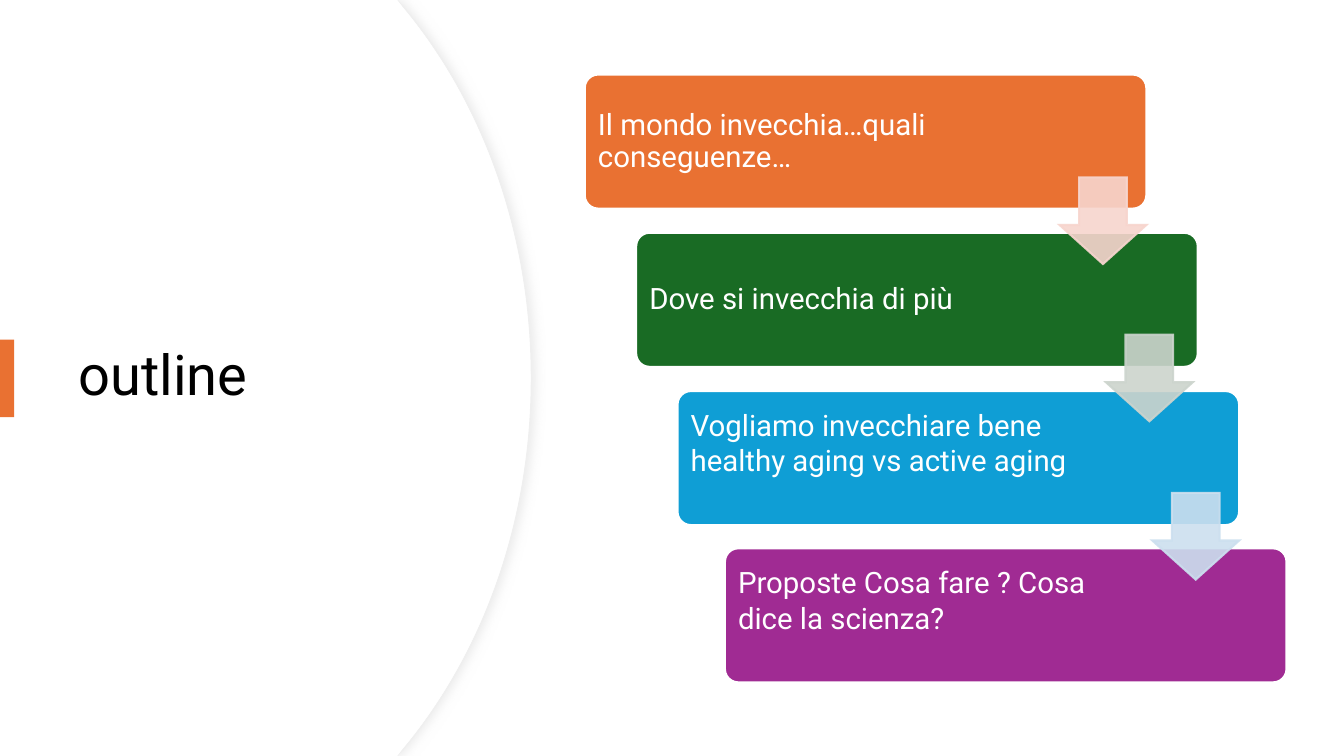
import dataclasses
import typing

import pptx
import pptx.dml.color
import pptx.enum.shapes
import pptx.enum.text
import pptx.oxml
import pptx.oxml.ns
import pptx.util

SCALE = 9144  # EMU in one px, 100 px to the inch
KIND = pptx.enum.shapes.MSO_SHAPE
MIDDLE = pptx.enum.text.MSO_ANCHOR.MIDDLE
LEFT = pptx.enum.text.PP_ALIGN.LEFT
SPACE = pptx.oxml.ns.nsdecls("a")


@dataclasses.dataclass(frozen=True)
class Theme:
    font: str = "Roboto"
    head: int = 40
    body: int = 21
    ink: str = "000000"
    paper: str = "FFFFFF"
    edge: str = "EFEFEF"
    shade: str = "D9D9D9"
    accent: str = "E97132"


@dataclasses.dataclass(frozen=True)
class Step:
    text: str
    left: int
    top: int
    width: int
    fill: str
    foot: int = 9
    lead: float = 1.0


@dataclasses.dataclass(frozen=True)
class Arrow:
    left: int
    top: int
    fill: str


THEME = Theme()
STEPS = [
    Step("Il mondo invecchia…quali conseguenze…", 580, 74, 402, "E97132", lead=0.9),
    Step("Dove si invecchia di più", 631, 231, 416, "196B24", lead=0.9),
    Step("Vogliamo invecchiare bene healthy aging vs active aging",
         672, 388, 417, "0F9ED5", foot=41),
    Step("Proposte Cosa fare ? Cosa dice la scienza?",
         719, 544, 416, "A02B93", foot=40),
]
ARROWS = [
    Arrow(1051, 176, "F7D5CE"),
    Arrow(1097, 332, "CCD4CD"),
    Arrow(1143, 489, "CCDFEF"),
]


def px(size: int) -> pptx.util.Emu:
    return pptx.util.Emu(size * SCALE)


def tint(code: str) -> pptx.dml.color.RGBColor:
    return pptx.dml.color.RGBColor.from_string(code)


def tag(name: str) -> str:
    return pptx.oxml.ns.qn(f"a:{name}")


def apply(item: typing.Any, form: dict[str, typing.Any]) -> None:
    for name, value in form.items():
        setattr(item, name, value)


def paint(shape: typing.Any, fill: str, line: str = "", width: float = 1.5) -> None:
    shape.shadow.inherit = False
    shape.fill.solid()
    shape.fill.fore_color.rgb = tint(fill)
    if line:
        shape.line.color.rgb = tint(line)
        shape.line.width = pptx.util.Pt(width)
        shape.element.spPr.find(tag("ln")).append(
            pptx.oxml.parse_xml(f'<a:miter {SPACE} lim="800000"/>'))
    else:
        shape.line.fill.background()


def fade(shape: typing.Any, share: int) -> None:
    """Set the opacity, in percent, of the fill and line."""
    for color in shape.element.spPr.iter(tag("srgbClr")):
        color.append(pptx.oxml.parse_xml(
            f'<a:alpha {SPACE} val="{share * 1000}"/>'))


def cast(shape: typing.Any) -> None:
    """Give the shape a soft shadow to its right."""
    shape.element.spPr.find(tag("effectLst")).append(pptx.oxml.parse_xml(
        f'<a:outerShdw {SPACE} blurRad="{pptx.util.Pt(7)}" '
        f'dist="{pptx.util.Pt(3)}" dir="0" algn="l" rotWithShape="0">'
        f'<a:srgbClr val="{THEME.shade}"><a:alpha val="50000"/></a:srgbClr>'
        '</a:outerShdw>'))


def bend(shape: typing.Any, first: int, count: int) -> None:
    """Turn each three straight segments, from the first on, into a curve."""
    lines = list(shape.element.spPr.iter(tag("lnTo")))
    for start in range(first, first + 3 * count, 3):
        curve = pptx.oxml.parse_xml(f"<a:cubicBezTo {SPACE}/>")
        lines[start].addprevious(curve)
        for line in lines[start:start + 3]:
            curve.append(line[0])
            line.getparent().remove(line)


def draw_panel(shapes: typing.Any, right: int) -> typing.Any:
    upper = [(394, 0), (right - 126, 8), (right - 48, 102), (right, 232)]
    lower = [(x, 750 - y) for x, y in reversed(upper)]
    pen = shapes.build_freeform(0, 0, scale=SCALE)
    pen.add_line_segments([*upper, (right, 375), *lower, (0, 750)], close=True)
    panel = pen.convert_to_shape()
    bend(panel, first=2, count=2)
    return panel


def write(frame: typing.Any, text: str, size: int, color: str, lead: float) -> None:
    apply(frame, {"word_wrap": True, "vertical_anchor": MIDDLE})
    line = frame.paragraphs[0]
    line.text = text
    apply(line, {"alignment": LEFT, "line_spacing": lead})
    apply(line.font, {"name": THEME.font, "size": pptx.util.Pt(size)})
    line.font.color.rgb = tint(color)


def draw_step(shapes: typing.Any, step: Step) -> None:
    card = shapes.add_shape(KIND.ROUNDED_RECTANGLE, px(step.left), px(step.top),
                            px(557), px(133))
    card.adjustments[0] = 0.1
    paint(card, step.fill, THEME.paper)
    label = shapes.add_textbox(px(step.left + 4), px(step.top + 4),
                               px(step.width), px(125))
    inset = px(9)
    apply(label.text_frame, {"margin_left": inset, "margin_right": inset,
                             "margin_top": inset, "margin_bottom": px(step.foot)})
    write(label.text_frame, step.text, THEME.body, THEME.paper, step.lead)


def draw_arrow(shapes: typing.Any, arrow: Arrow) -> None:
    shape = shapes.add_shape(KIND.DOWN_ARROW, px(arrow.left), px(arrow.top),
                             px(86), px(86))
    shape.adjustments[0] = 0.55
    shape.adjustments[1] = 0.45
    paint(shape, arrow.fill, arrow.fill)
    fade(shape, 90)


def main() -> None:
    deck = pptx.Presentation()
    apply(deck, {"slide_width": px(1333), "slide_height": px(750)})
    slide = deck.slides.add_slide(deck.slide_layouts.get_by_name("Title Only"))
    shapes = slide.shapes

    back = draw_panel(shapes, 527)
    paint(back, THEME.paper, THEME.edge, 0.75)
    cast(back)
    paint(draw_panel(shapes, 526), THEME.paper)

    title = shapes.title
    title.element.getparent().append(title.element)  # above the panels
    apply(title, {"left": px(68), "top": px(127),
                  "width": px(394), "height": px(495)})
    write(title.text_frame, "outline", THEME.head, THEME.ink, 0.9)

    mark = shapes.add_shape(KIND.RECTANGLE, 0, px(337), px(14), px(77))
    paint(mark, THEME.accent)

    group = shapes.add_group_shape()
    for step in STEPS:
        draw_step(group.shapes, step)
    for arrow in ARROWS:
        draw_arrow(group.shapes, arrow)
    deck.save("out.pptx")


if __name__ == "__main__":
    main()
